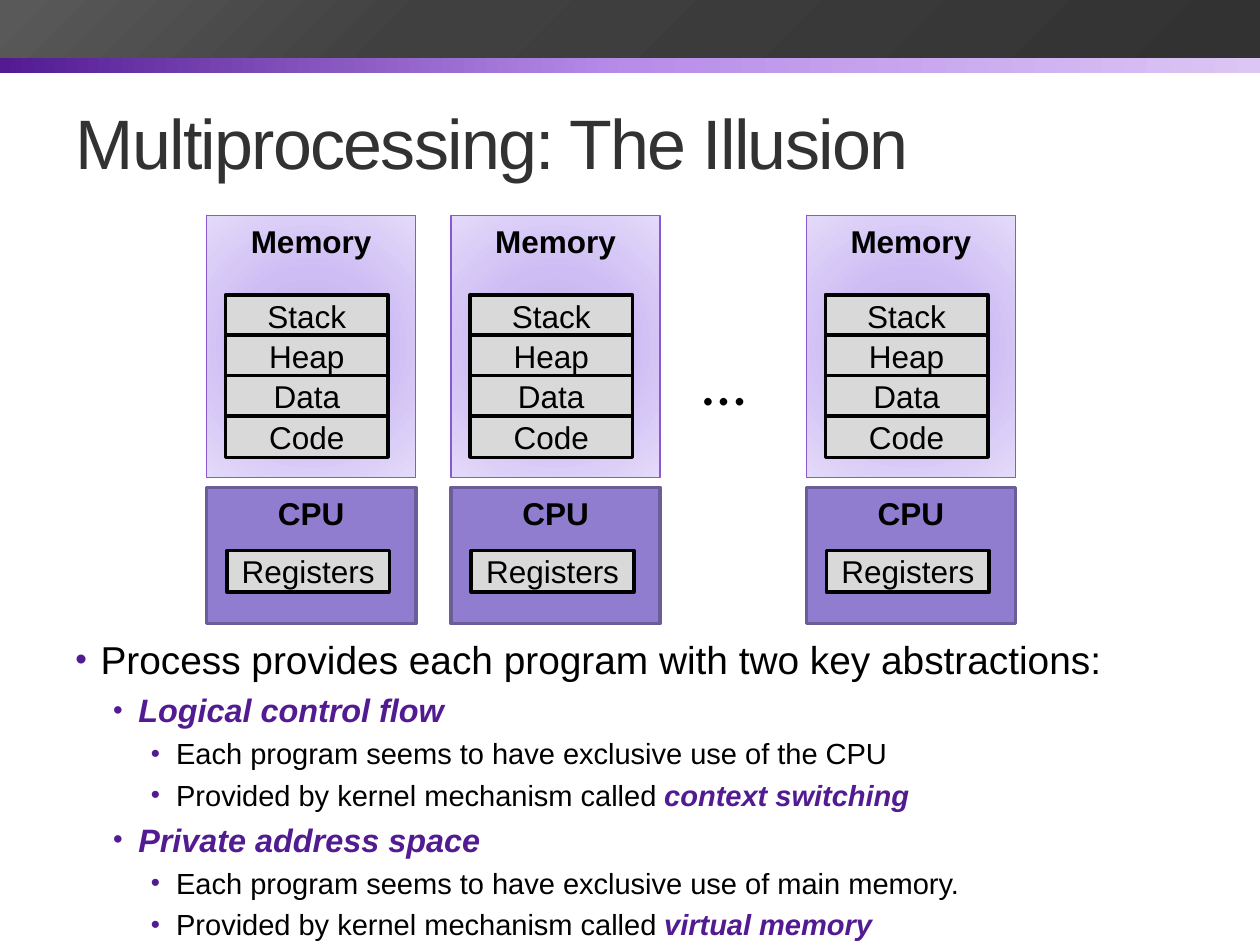
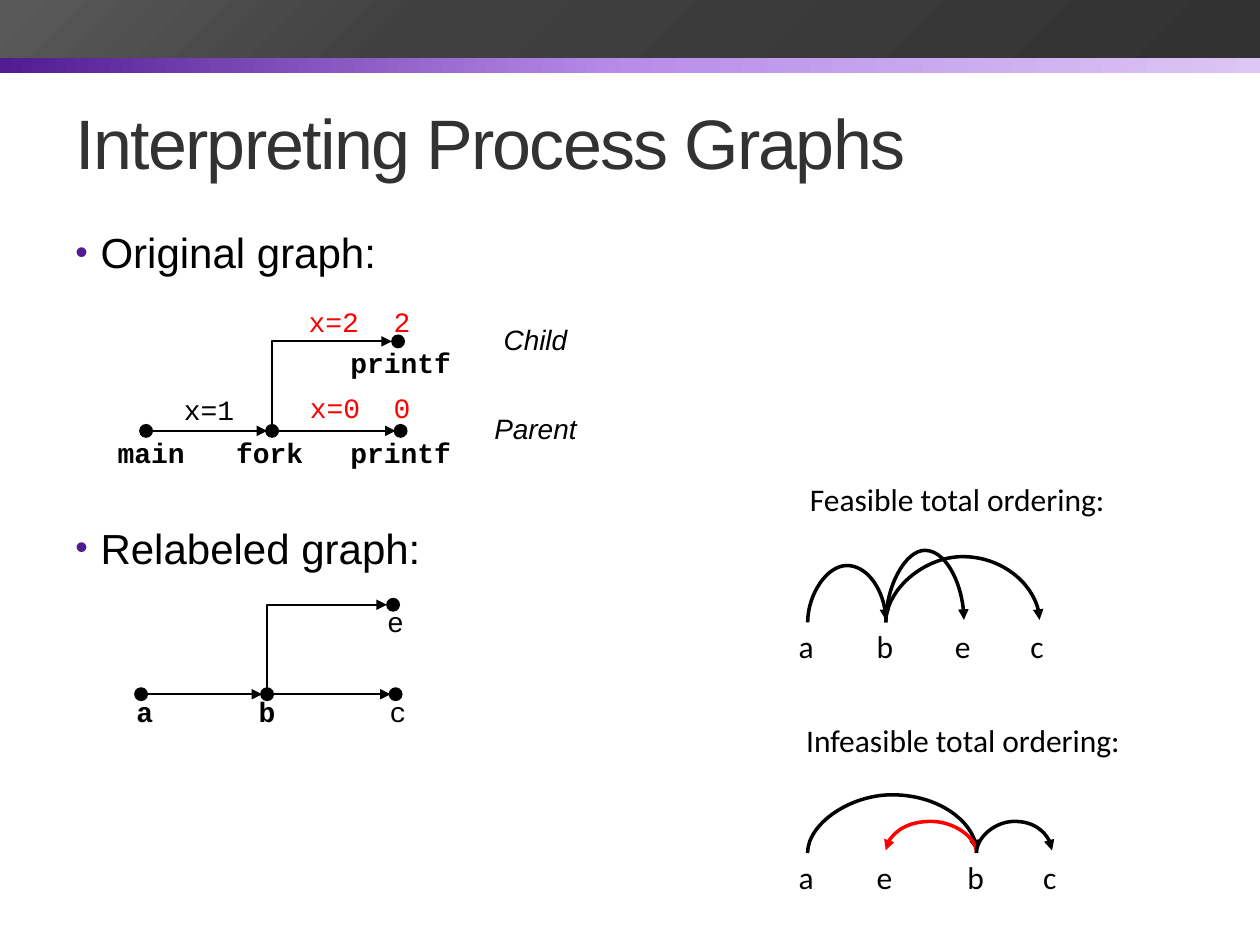
from pptx import Presentation, util as u
from pptx.dml.color import RGBColor
from pptx.enum import shapes, text
from pptx.oxml import parse_xml
from pptx.oxml.ns import nsdecls, qn

# ---- Shared look ----
WIDE, HIGH = 10, 7.5
BLACK, RED, PURPLE, DARK, GREY = "000000", "FF0000", "521B92", "323232", "D9D9D9"
MONO, SANS, PLAIN = "Courier New", "Arial", "Calibri"
BANDS = [  # box, gradient stops, angle
    ((0, 0.24, WIDE, 0.34), [(0, PURPLE), (50, "B88DEA"), (100, "DCC6F4")], 0),
    ((0, 0, WIDE, 0.46), [(0, DARK), (66, "404040"), (99, "595959")], 225),
]
TITLE_BOX = (0.5, 0.58, 9, 1.08)
TITLE = dict(name=SANS, size=40, color=DARK)
STRONG = dict(color=PURPLE, bold=True, italic=True)
MID, LEFT = text.PP_ALIGN.CENTER, text.PP_ALIGN.LEFT
TOP, CENTRE = text.MSO_ANCHOR.TOP, text.MSO_ANCHOR.MIDDLE

# ---- Slide 1 ----
POINTS = [  # level, plain words, stressed words
    (0, "Process provides each program with two key abstractions:", ""),
    (1, "", "Logical control flow"),
    (2, "Each program seems to have exclusive use of the CPU", ""),
    (2, "Provided by kernel mechanism called ", "context switching"),
    (1, "", "Private address space"),
    (2, "Each program seems to have exclusive use of main memory.", ""),
    (2, "Provided by kernel mechanism called ", "virtual memory"),
]
LEVELS = [(22.2, 85), (18.5, 85), (16.6, 90)]  # text size, bullet percent
COLUMNS = [1.64, 3.58, 6.4]
REGIONS = ["Stack", "Heap", "Data", "Code"]
GLOW = [(0, "C0B0E2"), (45, "CEBDF4"), (100, "E4DAF9")]

# ---- Slide 2 ----
HEADINGS = [(0, "Original graph:", ""), (0, "Relabeled graph:", "")]
CODE = dict(name=MONO, size=16, color=BLACK)
BOLD = dict(CODE, bold=True)
HOT = dict(CODE, color=RED)
SIDE = dict(name=SANS, size=16, color=BLACK, italic=True)
ORDER = dict(name=PLAIN, size=18, color=BLACK)
GRAPHS = [  # fork point, labels as (words, middle, top, format)
    ((2.16, 3.42), [
        ("main", 1.2, 3.41, BOLD), ("fork", 2.14, 3.41, BOLD),
        ("printf", 3.18, 3.41, BOLD), ("printf", 3.18, 2.69, BOLD),
        ("x=1", 1.66, 3.07, CODE), ("x=2", 2.65, 2.37, HOT), ("2", 3.19, 2.37, HOT),
        ("x=0", 2.66, 3.05, HOT), ("0", 3.19, 3.05, HOT),
        ("Child", 4.25, 2.51, SIDE), ("Parent", 4.25, 3.22, SIDE)]),
    ((2.12, 5.51), [
        ("a", 1.15, 5.46, BOLD), ("b", 2.12, 5.46, BOLD),
        ("c", 3.16, 5.46, CODE), ("e", 3.14, 4.75, CODE)]),
]
ORDERS = [  # heading, its corner, base line, stops, arcs as (from, to, rise, colour)
    ("Feasible total ordering:", (6.33, 3.76), 4.94,
     dict(a=6.41, b=7.03, e=7.65, c=8.25),
     [("a", "b", 0.45, BLACK), ("b", "e", 0.57, BLACK), ("b", "c", 0.52, BLACK)]),
    ("Infeasible total ordering:", (6.3, 5.67), 6.77,
     dict(a=6.41, e=7.03, b=7.75, c=8.35),
     [("a", "b", 0.46, BLACK), ("b", "e", 0.25, RED), ("b", "c", 0.25, BLACK)]),
]


def inch(*nums):
    return [u.Inches(n) for n in nums]


def rgb(code):
    return RGBColor.from_string(code)


def style(font, form):
    for key, val in form.items():
        if key == "color":
            font.color.rgb = rgb(val)
        else:
            setattr(font, key, u.Pt(val) if key == "size" else val)


def write(para, words, form):
    run = para.add_run()
    run.text = words
    style(run.font, form)


def blend(shape, stops, angle=None):
    """Fill with a gradient: linear at an angle, or round when none is given."""
    marks = "".join(f'<a:gs pos="{pos * 1000}"><a:srgbClr val="{code}"/></a:gs>'
                    for pos, code in stops)
    if angle is None:
        way = ('<a:path path="circle"><a:fillToRect l="100000" t="100000" '
               'r="100000" b="100000"/></a:path>')
    else:
        way = f'<a:lin ang="{angle * 60000}" scaled="0"/>'
    shape.fill.solid()
    props = shape.element.spPr
    props.replace(props.find(qn("a:solidFill")), parse_xml(
        f'<a:gradFill {nsdecls("a")} rotWithShape="1"><a:gsLst>{marks}</a:gsLst>{way}</a:gradFill>'))


def block(slide, box, fill, edge=None, weight=1, words="", anchor=CENTRE, bold=False,
          kind=shapes.MSO_SHAPE.RECTANGLE):
    shape = slide.shapes.add_shape(kind, *inch(*box))
    shape.shadow.inherit = False
    if isinstance(fill, str):
        shape.fill.solid()
        shape.fill.fore_color.rgb = rgb(fill)
    else:
        blend(shape, *fill)
    if edge:
        shape.line.color.rgb = rgb(edge)
        shape.line.width = u.Pt(weight)
    else:
        shape.line.fill.background()
    if words:
        frame = shape.text_frame
        frame.vertical_anchor = anchor
        para = frame.paragraphs[0]
        para.alignment = MID
        write(para, words, dict(name=SANS, size=18, color=BLACK, bold=bold))
    return shape


def label(slide, words, box, form, align=LEFT):
    frame = slide.shapes.add_textbox(*inch(*box)).text_frame
    frame.word_wrap = True
    para = frame.paragraphs[0]
    para.alignment = align
    write(para, words, form)


def body(slide, box, points, sizes, gap=None):
    """Bulleted text; gap is the space in points before all but the first."""
    frame = slide.shapes.add_textbox(*inch(*box)).text_frame
    frame.word_wrap = True
    for num, (level, plain, stress) in enumerate(points):
        para = frame.paragraphs[0] if num == 0 else frame.add_paragraph()
        size, share = sizes[level]
        para.level = level
        para.space_before = u.Pt(gap if gap and num else round(size * 0.23, 1))
        base = dict(name=SANS, size=size, color=BLACK)
        for words, form in ((plain, base), (stress, dict(base, **STRONG))):
            if words:
                write(para, words, form)
    for para, point in zip(frame.paragraphs, points):
        props = para.runs and next(para.runs[0].font.fill and iter([para]))
    for elem, (level, *_) in zip(slide.shapes[-1].element.iter(qn("a:p")), points):
        props = elem.get_or_add_pPr()
        props.set("marL", str(u.Inches(0.2 + 0.3 * level)))
        props.set("indent", str(u.Inches(-0.2)))
        for part in (f'buClr {nsdecls("a")}><a:srgbClr val="{PURPLE}"/></a:buClr',
                     f'buSzPct {nsdecls("a")} val="{sizes[level][1] * 1000}"/',
                     f'buFont {nsdecls("a")} typeface="{SANS}"/',
                     f'buChar {nsdecls("a")} char="•"/'):
            props.append(parse_xml(f"<a:{part}>"))


def arrow(slide, start, end, weight=1, color=BLACK, kind=shapes.MSO_CONNECTOR.STRAIGHT):
    line = slide.shapes.add_connector(kind, *inch(*start, *end))
    line.line.color.rgb = rgb(color)
    line.line.width = u.Pt(weight)
    props = line.element.spPr
    props.find(qn("a:ln")).append(parse_xml(f'<a:tailEnd {nsdecls("a")} type="triangle"/>'))
    props.append(parse_xml(f'<a:effectLst {nsdecls("a")}/>'))
    return line


def climb(slide, start, end, rise=None, weight=1, color=BLACK):
    """Arrow that leaves upwards: an arc of the given rise, or else one right angle."""
    (left, low), (right, high) = start, end
    mid, centre = (left + right) / 2, (low + high) / 2
    tall, wide = (low - high) / 2, abs(right - left) / 2
    kind = shapes.MSO_CONNECTOR.CURVE if rise else shapes.MSO_CONNECTOR.ELBOW
    line = arrow(slide, (mid - tall, centre - wide), (mid + tall, centre + wide),
                 weight, color, kind)
    turn = dict(rot=90, flipH=1, flipV=1) if right > left else dict(rot=270, flipV=1)
    turn["rot"] *= 60000
    for key, val in turn.items():
        line.element.spPr.find(qn("a:xfrm")).set(key, str(val))
    geom = line.element.spPr.find(qn("a:prstGeom"))
    if rise:
        for old in list(geom):
            geom.remove(old)
        bend = round(rise / (low - high) * 100000)
        geom.append(parse_xml(f'<a:avLst {nsdecls("a")}><a:gd name="adj1" '
                              f'fmla="val {bend}"/></a:avLst>'))
    else:
        geom.set("prst", "bentConnector2")


def page(deck, title):
    slide = deck.slides.add_slide(deck.slide_layouts[5])
    head = slide.shapes.title
    head.left, head.top, head.width, head.height = inch(*TITLE_BOX)
    frame = head.text_frame
    frame.vertical_anchor = CENTRE
    para = frame.paragraphs[0]
    para.alignment = LEFT
    write(para, title, TITLE)
    for props in head.element.iter(qn("a:rPr")):
        props.set("spc", "-100")
    return slide


def dress(deck, slide):
    """Draw the bands and move them behind everything, onto the master."""
    for spot, (box, stops, angle) in enumerate(BANDS, 2):
        band = block(slide, box, (stops, angle))
        deck.slide_master.shapes.element.insert(spot, band.element)


def machine(slide, left):
    block(slide, (left, 3.87, 1.66, 1.08), "917DD0", "6B5C9A", 2.08, "CPU", TOP, True)
    block(slide, (left + 0.16, 4.37, 1.29, 0.33), GREY, BLACK, 2, "Registers")
    block(slide, (left, 1.71, 1.66, 2.08), (GLOW,), "8B58D2", 0.75, "Memory", TOP, True)
    for row, name in enumerate(REGIONS):
        block(slide, (left + 0.15, 2.34 + 0.32 * row, 1.29, 0.33), GREY, BLACK, 2, name)


def graph(slide, fork, labels):
    x, y = fork
    rad = 0.05
    first, last, child = (x - 1, y), (x + 1.02, y), (x + 1, y - 0.71)
    for cx, cy in (first, fork, last, child):
        block(slide, (cx - rad, cy - rad, 2 * rad, 2 * rad), BLACK, BLACK, 0.75,
              kind=shapes.MSO_SHAPE.OVAL)
    for one, two in ((first, fork), (fork, last)):
        arrow(slide, (one[0] + rad, y), (two[0] - rad + 0.01, y))
    climb(slide, (x, y - rad), (child[0] - rad, child[1]))
    for words, mid, top, form in labels:
        label(slide, words, (mid - 0.6, top, 1.2, 0.37), form, MID)


def order(slide, head, corner, base, stops, arcs):
    label(slide, head, (*corner, 3.44, 0.5), ORDER)
    for name, x in stops.items():
        label(slide, name, (x - 0.17, base - 0.01, 0.34, 0.4), ORDER)
    for one, two, rise, color in arcs:
        climb(slide, (stops[one], base), (stops[two], base - 0.02), rise, 2, color)


def main():
    deck = Presentation()
    deck.slide_width, deck.slide_height = inch(WIDE, HIGH)

    slide = page(deck, "Multiprocessing: The Illusion")
    dress(deck, slide)
    body(slide, (0.5, 5, 9, 2.5), POINTS, LEVELS)
    for left in COLUMNS:
        machine(slide, left)
    label(slide, "…", (5.48, 2.67, 0.62, 0.71), dict(name=PLAIN, size=36, color=BLACK))

    slide = page(deck, "Interpreting Process Graphs")
    body(slide, (0.5, 1.75, 9, 5.33), HEADINGS, [(24, 85)], gap=140)
    for fork, labels in GRAPHS:
        graph(slide, fork, labels)
    for parts in ORDERS:
        order(slide, *parts)

    deck.save("out.pptx")


if __name__ == "__main__":
    main()
